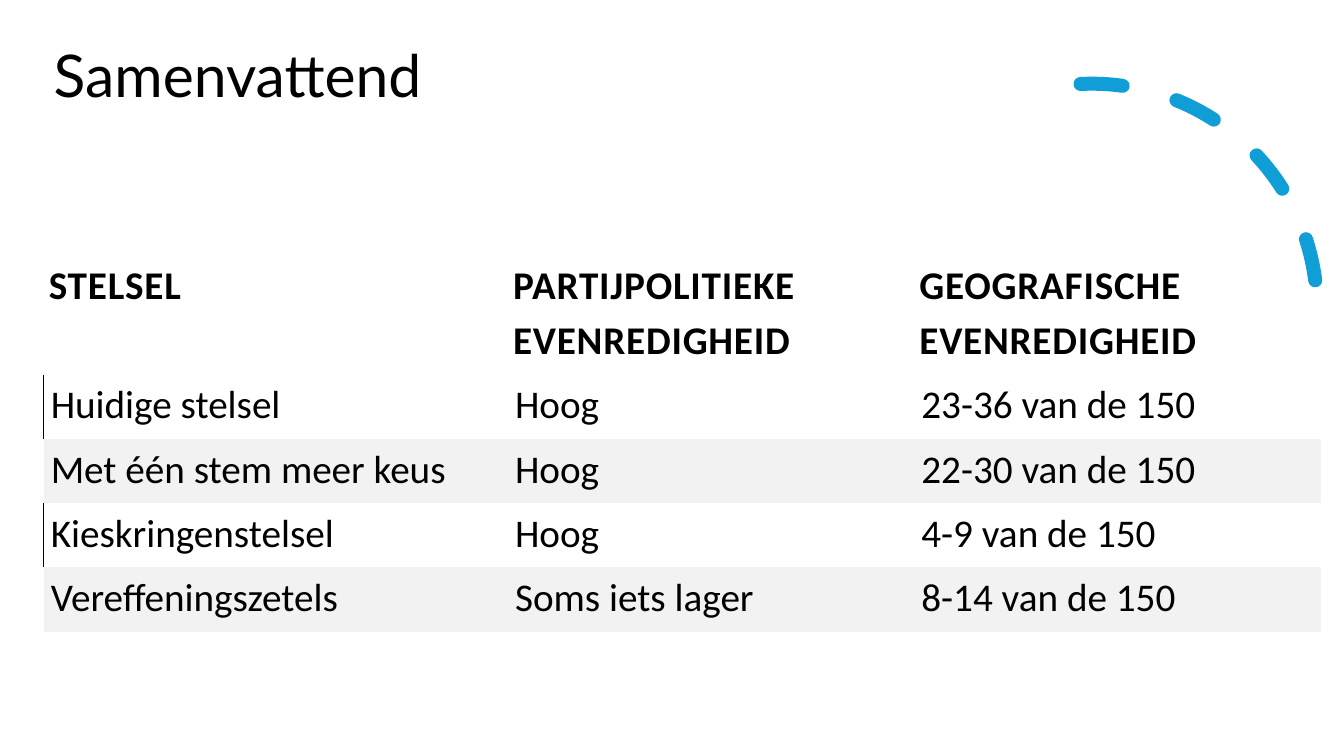
from lxml import etree
from pptx import Presentation
from pptx.dml.color import RGBColor
from pptx.enum.dml import MSO_LINE
from pptx.enum.shapes import MSO_SHAPE
from pptx.enum.text import MSO_ANCHOR, PP_ALIGN
from pptx.oxml.ns import qn
from pptx.util import Cm, Pt

ARC, DASH = MSO_SHAPE.ARC, MSO_LINE.DASH
TOP, BOTTOM, LEFT = MSO_ANCHOR.TOP, MSO_ANCHOR.BOTTOM, PP_ALIGN.LEFT
COLORS = {"text": "000000", "arc": "0F9ED5", "band": "F2F2F2"}
NO_STYLE_NO_GRID = "{2D5ABB26-0587-4C30-8999-92F81FD0307C}"

SYSTEMS = [
    ("STELSEL", "PARTIJPOLITIEKE\nEVENREDIGHEID", "GEOGRAFISCHE\nEVENREDIGHEID"),
    ("Huidige stelsel", "Hoog", "23-36 van de 150"),
    ("Met één stem meer keus", "Hoog", "22-30 van de 150"),
    ("Kieskringenstelsel", "Hoog", "4-9 van de 150"),
    ("Vereffeningszetels", "Soms iets lager", "8-14 van de 150"),
]
COLUMN_WIDTHS = [11.7, 10.24, 10.24]
HEADER_HEIGHT, ROW_HEIGHT = 3.23, 1.61
MARGIN_LEFT, CONTENT_WIDTH = 1.1, 32.18


def style_run(run, font, size, bold=False):
    run.font.name = font
    run.font.size = Pt(size)
    run.font.bold = bold
    run.font.color.rgb = RGBColor.from_string(COLORS["text"])


def add_left_border(cell):
    border = etree.Element(qn("a:lnL"), w=str(Pt(1)))
    fill = etree.SubElement(border, qn("a:solidFill"))
    etree.SubElement(fill, qn("a:srgbClr"), val=COLORS["text"])
    cell._tc.get_or_add_tcPr().insert(0, border)


prs = Presentation()
prs.slide_width, prs.slide_height = Cm(33.87), Cm(19.05)
slide = prs.slides.add_slide(prs.slide_layouts[5])

# Dashed arc
arc = slide.shapes.add_shape(ARC, Cm(21.84), Cm(2.11), Cm(11.35), Cm(11.35))
arc.shadow.inherit = False
arc.rotation = 262.7
arc._element.spPr.find(qn("a:xfrm")).set("flipV", "1")
arc.fill.background()
arc.line.color.rgb = RGBColor.from_string(COLORS["arc"])
arc.line.width = Pt(10)
arc.line.dash_style = DASH
arc._element.spPr.find(qn("a:ln")).set("cap", "rnd")

# Title
title = slide.shapes.title
title.left, title.top = Cm(MARGIN_LEFT), Cm(0.64)
title.width, title.height = Cm(CONTENT_WIDTH), Cm(3.94)
title.text_frame.text = "Samenvattend"
title.text_frame.vertical_anchor = BOTTOM
title.text_frame.margin_bottom = Cm(1.8)
heading = title.text_frame.paragraphs[0]
heading.alignment = LEFT
heading.line_spacing = 0.9
style_run(heading.runs[0], "Lato", 42)

# Comparison of the systems
table_height = HEADER_HEIGHT + ROW_HEIGHT * (len(SYSTEMS) - 1)
table = slide.shapes.add_table(
    len(SYSTEMS), len(COLUMN_WIDTHS),
    Cm(MARGIN_LEFT), Cm(6.2), Cm(CONTENT_WIDTH), Cm(table_height),
).table
table.horz_banding = False
table._tbl.tblPr.find(qn("a:tableStyleId")).text = NO_STYLE_NO_GRID
for column, width in zip(table.columns, COLUMN_WIDTHS):
    column.width = Cm(width)

for row_index, system in enumerate(SYSTEMS):
    is_header = row_index == 0
    is_banded = not is_header and row_index % 2 == 0
    table.rows[row_index].height = Cm(HEADER_HEIGHT if is_header else ROW_HEIGHT)
    for column_index, wording in enumerate(system):
        cell = table.cell(row_index, column_index)
        cell.text_frame.text = wording
        cell.vertical_anchor = TOP
        cell.margin_left = cell.margin_right = Cm(0.13)
        cell.margin_top = Cm(0.23 if is_header else 0)
        cell.margin_bottom = Cm(0.23)
        if is_banded:
            cell.fill.solid()
            cell.fill.fore_color.rgb = RGBColor.from_string(COLORS["band"])
        else:
            cell.fill.background()
        if column_index == 0 and not is_header and not is_banded:
            add_left_border(cell)
        for paragraph in cell.text_frame.paragraphs:
            paragraph.line_spacing = 1.15
            run = paragraph.runs[0]
            style_run(run, "Calibri", 28, bold=is_header)
            if is_header:
                run._r.get_or_add_rPr().set("spc", "60")
            else:
                paragraph._p.get_or_add_pPr().set("indent", str(Cm(0.05)))

prs.save("out.pptx")
